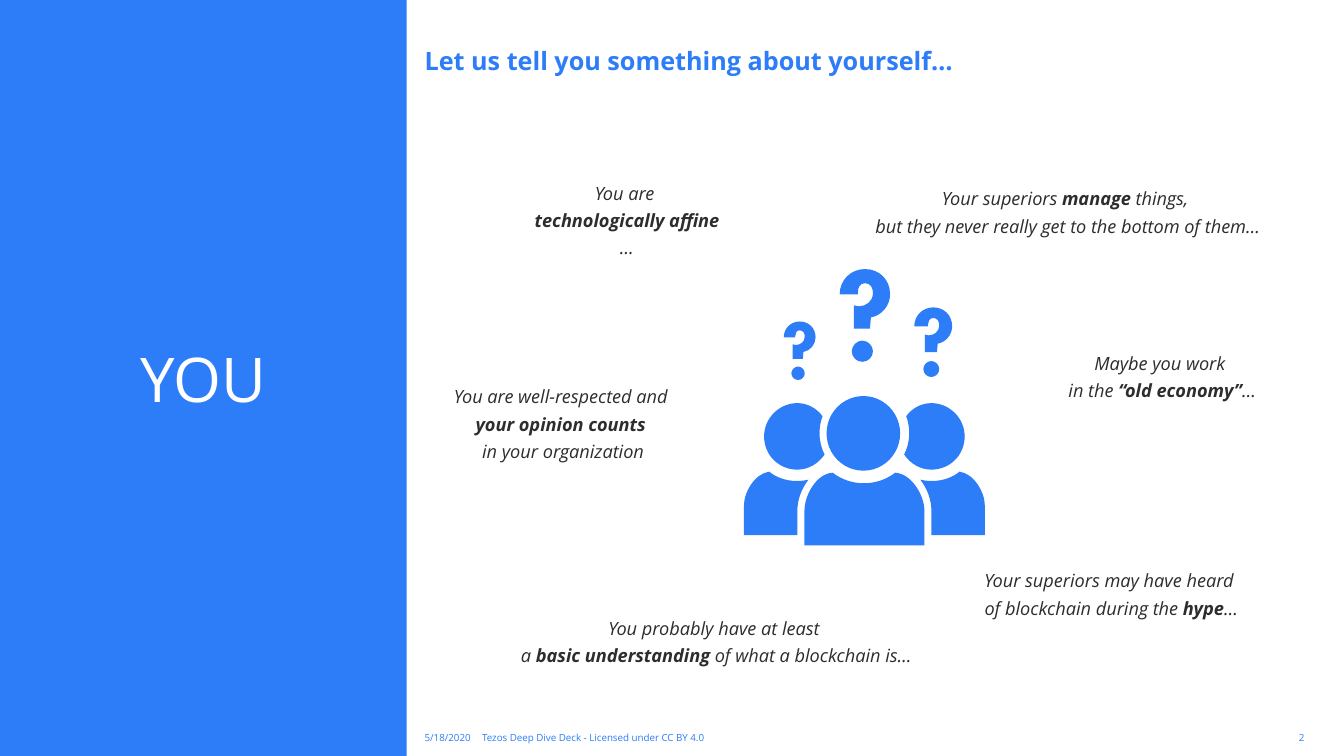
from pptx import Presentation
from pptx.dml.color import RGBColor
from pptx.enum.shapes import MSO_SHAPE
from pptx.enum.text import MSO_ANCHOR, MSO_AUTO_SIZE, PP_ALIGN
from pptx.oxml.ns import qn
from pptx.util import Pt

LEFT, CENTER, RIGHT = PP_ALIGN.LEFT, PP_ALIGN.CENTER, PP_ALIGN.RIGHT
MIDDLE, BOTTOM = MSO_ANCHOR.MIDDLE, MSO_ANCHOR.BOTTOM
GROW = MSO_AUTO_SIZE.SHAPE_TO_FIT_TEXT
RECTANGLE, OVAL = MSO_SHAPE.RECTANGLE, MSO_SHAPE.OVAL
COLORS = {"blue": "2C7DF7", "white": "FFFFFF", "ink": "2D2D2D"}
FONT = "Open Sans"

ICON_UNIT = 0.72
ICON_WIDTH = 239
MARK_HEIGHT = 92
MARK_HOOK = [(14, 36), (16, 37, 17, 37, 19, 37), (26, 37, 33, 32, 33, 24),
             (33, 19, 31, 14, 25, 14), (20, 14, 18, 19, 18, 23), (18, 25), (0, 25),
             (0, 11, 11, 0, 25, 0), (39, 0, 50, 10, 50, 25), (50, 36, 42, 46, 31, 48),
             (30, 59), (14, 59)]
MARK_DOT = [(33, 81.5), (33, 87.5, 28, 92, 22.5, 92), (17, 92, 12, 87.5, 12, 81.5),
            (12, 76, 17, 71, 22.5, 71), (28, 71, 33, 76, 33, 81.5)]
MARKS = [(95, 0, 92), (169, 38, 69), (39.5, 52, 58)]
SIDE_HEAD = [(75, 163), (75, 157, 76, 151, 78, 146), (72, 138, 63, 133, 53, 133),
             (35, 133, 20, 148, 20, 166), (20, 185, 35, 199, 53, 199),
             (64, 199, 74, 193, 80, 184), (77, 178, 75, 171, 75, 163)]
SIDE_BODY = [(53, 240), (53, 229, 57, 218, 64, 209), (51, 212, 36, 210, 25, 201),
             (11, 203, 0, 221, 0, 235), (0, 264), (53, 264)]
FRONT_BODY = [(60, 240), (60, 274), (179, 274), (179, 240),
              (179, 224, 166, 203, 150, 202), (132, 216, 106, 216, 88, 202),
              (72, 203, 60, 224, 60, 240)]
FRONT_HEAD = (82, 126, 73, 74)

STATEMENTS = [
    ((375.1, 129.6, 145.4, 55.4),
     [[("You are ", False)], [("technologically affine", True)], [("…", False)]]),
    ((696.2, 406.8, 195.1, 35.3),
     [[("Your superiors may have heard ", False)],
      [("of blockchain during the ", False), ("hype", True), ("…", False)]]),
    ((364.3, 440.6, 294.5, 35.3),
     [[("You probably have at least ", False)],
      [("a ", False), ("basic understanding ", True), ("of what a blockchain is…", False)]]),
    ((756.7, 251.3, 146.9, 35.3),
     [[("Maybe you work ", False)],
      [("in the ", False), ("“old economy”", True), ("…", False)]]),
    ((617.8, 133.9, 289.4, 35.3),
     [[("Your superiors ", False), ("manage ", True), ("things, ", False)],
      [("but they never really get to the bottom of them…", False)]]),
    ((317.5, 275, 169.2, 55.4),
     [[("You are well-respected and ", False)], [("your opinion counts ", True)],
      [("in your organization", False)]]),
]


def paint(shape, color):
    """Give a shape a flat fill without line or shadow."""
    shape.shadow.inherit = False
    shape.fill.solid()
    shape.fill.fore_color.rgb = RGBColor.from_string(COLORS[color])
    shape.line.fill.background()


def set_frame(frame, insets, anchor, wrap=True):
    """Set the insets, anchor and wrapping of a text frame."""
    frame.word_wrap = wrap
    frame.vertical_anchor = anchor
    (frame.margin_left, frame.margin_top,
     frame.margin_right, frame.margin_bottom) = [Pt(inset) for inset in insets]


def add_span(para, text, size, color, bold=False, italic=False):
    """Add one formatted run to a paragraph."""
    span = para.add_run()
    span.text = text
    span.font.name, span.font.size = FONT, Pt(size)
    span.font.bold, span.font.italic = bold, italic
    span.font.color.rgb = RGBColor.from_string(COLORS[color])


def add_label(page, box, text, size, align, insets, anchor=MIDDLE, wrap=True, bold=False):
    """Add a blue one-line label."""
    frame = page.shapes.add_textbox(*map(Pt, box)).text_frame
    set_frame(frame, insets, anchor, wrap)
    para = frame.paragraphs[0]
    para.alignment = align
    add_span(para, text, size, "blue", bold)


def add_panel(page, box):
    """Draw the blue side panel with its title."""
    panel = page.shapes.add_shape(RECTANGLE, *map(Pt, box))
    paint(panel, "blue")
    set_frame(panel.text_frame, (28, 0, 28, 0), MIDDLE)
    para = panel.text_frame.paragraphs[0]
    para.alignment = CENTER
    add_span(para, "YOU", 44, "white")


def add_footer(page, box):
    """Place date, deck name and page number along the footer box."""
    left, top, width, height = box
    add_label(page, (left, top, 38.9, height), "5/18/2020", 7, LEFT, (0, 0, 0, 0), wrap=False)
    add_label(page, (left + 41.1, top, 394.6, height),
              "Tezos Deep Dive Deck - Licensed under CC BY 4.0", 7, LEFT, (0, 3.6, 7.2, 3.6))
    add_label(page, (left + width - 28.8, top, 28.8, height), "2", 7, RIGHT,
              (7.2, 3.6, 0, 3.6))


def move_outline(outline, left=0, top=0, x_scale=1, y_scale=1):
    """Scale and shift every coordinate pair of an outline."""
    return [tuple(top + value * y_scale if index % 2 else left + value * x_scale
                  for index, value in enumerate(part)) for part in outline]


def add_outline(page, origin, outlines):
    """Draw closed outlines of lines and cubic curves as one blue freeform."""
    scale = ICON_UNIT * 100
    placed = [move_outline(outline, origin[0] * 100, origin[1] * 100, scale, scale)
              for outline in outlines]
    builder = page.shapes.build_freeform(*placed[0][0], scale=Pt(1) / 100)
    for number, outline in enumerate(placed):
        if number:
            builder.move_to(*outline[0])
        points = [pair for part in outline[1:] for pair in zip(part[::2], part[1::2])]
        builder.add_line_segments(points, close=True)
    shape = builder.convert_to_shape()
    lines = iter(list(shape._element.iter(qn("a:lnTo"))))
    for part in [part for outline in placed for part in outline[1:]]:
        segment = next(lines)
        if len(part) == 6:
            segment.tag = qn("a:cubicBezTo")
            for extra in (next(lines), next(lines)):
                segment.append(extra[0])
                extra.getparent().remove(extra)
    paint(shape, "blue")


def add_crowd(page, origin):
    """Draw three people below three question marks."""
    left, top = origin
    for mark_x, mark_y, height in MARKS:
        ratio = height / MARK_HEIGHT
        add_outline(page, origin, [move_outline(outline, mark_x, mark_y, ratio, ratio)
                                   for outline in (MARK_HOOK, MARK_DOT)])
    add_outline(page, origin, [FRONT_BODY])
    for outline in (SIDE_BODY, SIDE_HEAD):
        add_outline(page, origin, [outline])
        add_outline(page, origin, [move_outline(outline, left=ICON_WIDTH, x_scale=-1)])
    x, y, width, height = [length * ICON_UNIT for length in FRONT_HEAD]
    head = page.shapes.add_shape(OVAL, Pt(left + x), Pt(top + y), Pt(width), Pt(height))
    paint(head, "blue")


def add_statement(page, box, lines):
    """Add one centred italic statement, a paragraph for each line."""
    frame = page.shapes.add_textbox(*map(Pt, box)).text_frame
    set_frame(frame, (5.8, 0, 5.8, 0), MIDDLE, wrap=False)
    frame.auto_size = GROW
    for index, line in enumerate(lines):
        para = frame.add_paragraph() if index else frame.paragraphs[0]
        para.alignment = CENTER
        para.space_before, para.space_after = Pt(3 if index else 0), Pt(1)
        for text, bold in line:
            add_span(para, text, 13, "ink", bold, italic=True)


def main():
    """Build the slide and save the deck."""
    deck = Presentation()
    deck.slide_width, deck.slide_height = Pt(960), Pt(540)
    page = deck.slides.add_slide(deck.slide_layouts[6])
    add_panel(page, (0, 0, 290.4, 540))
    add_footer(page, (303.3, 518.4, 628.4, 17.3))
    add_label(page, (303.3, 20.6, 575.3, 33.1), "Let us tell you something about yourself…",
              18, LEFT, (0, 5.8, 0, 0), anchor=BOTTOM, bold=True)
    add_crowd(page, (531.4, 192.2))
    for box, lines in STATEMENTS:
        add_statement(page, box, lines)
    deck.save("out.pptx")


if __name__ == "__main__":
    main()
